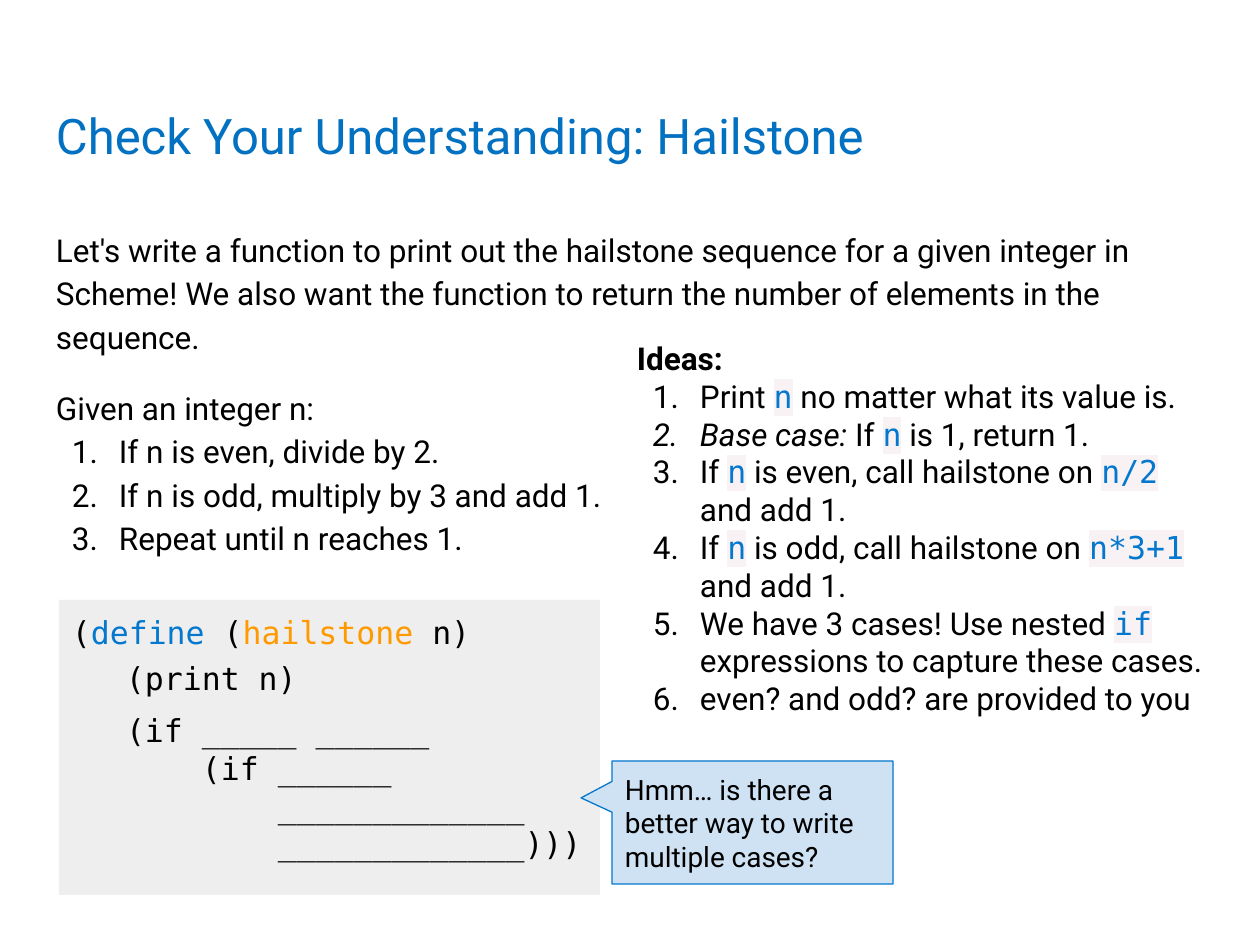
from pptx import Presentation
from pptx import util as u
from pptx.dml.color import RGBColor
from pptx.enum import shapes, text
from pptx.oxml.ns import qn
from lxml import etree

EMU_PER_PX = 914400 / 126
SANS, MONO = "Roboto", "DejaVu Sans Mono"
BLACK, BLUE, TITLE_BLUE, ORANGE = "000000", "0378CE", "0371C1", "FF9900"
CODE_GREY, CALLOUT_BLUE, INLINE_PINK = "EEEEEE", "CFE2F3", "F9F2F4"


def px(n):
    return u.Emu(round(n * EMU_PER_PX))


def rgb(hex_string):
    return RGBColor.from_string(hex_string)


def add_xml(parent, tag, **attributes):
    return etree.SubElement(parent, qn(tag), attributes)


def inline(code):
    """A run of highlighted code inside a sentence."""
    return code, dict(font=MONO, color=BLUE, highlight=INLINE_PINK)


class SlideBuilder:
    INSET = 13
    LIST_INDENT, LIST_HANG = 63, 47

    def __init__(self, slide):
        self.slide = slide

    def frame(self, shape, anchor=text.MSO_ANCHOR.TOP):
        frame = shape.text_frame
        frame.word_wrap = True
        frame.vertical_anchor = anchor
        frame.margin_left = frame.margin_right = px(self.INSET)
        frame.margin_top = frame.margin_bottom = px(self.INSET)
        return frame

    def textbox(self, box, anchor=text.MSO_ANCHOR.TOP):
        return self.frame(self.slide.shapes.add_textbox(*map(px, box)), anchor)

    def shape(self, kind, box, fill, line=None, anchor=text.MSO_ANCHOR.TOP):
        shape = self.slide.shapes.add_shape(kind, *map(px, box))
        shape.shadow.inherit = False
        shape.fill.solid()
        shape.fill.fore_color.rgb = rgb(fill)
        if line:
            shape.line.color.rgb = rgb(line)
            shape.line.width = u.Pt(0.75)
        else:
            shape.line.fill.background()
        return shape, self.frame(shape, anchor)

    def paragraph(self, frame, *parts, numbered=False, indent=0, spacing=None,
                  before=0, **style):
        """Fill the empty first paragraph or add one; a part is a string or (string, style)."""
        first = frame.paragraphs[0]
        paragraph = frame.add_paragraph() if first.runs else first
        paragraph.alignment = text.PP_ALIGN.LEFT
        paragraph.space_before = u.Pt(before)
        if spacing:
            paragraph.line_spacing = spacing
        for part in parts:
            words, own = (part, {}) if isinstance(part, str) else part
            run = paragraph.add_run()
            run.text = words
            self.format(run, **{**style, **own})
        properties = paragraph._p.get_or_add_pPr()
        if numbered:
            indent = self.LIST_INDENT
            properties.set("indent", str(-px(self.LIST_HANG)))
            bullet_color = add_xml(properties, "a:buClr")
            add_xml(bullet_color, "a:srgbClr", val=BLACK)
            add_xml(properties, "a:buFont", typeface=SANS)
            add_xml(properties, "a:buAutoNum", type="arabicPeriod")
        if indent:
            properties.set("marL", str(px(indent)))

    def format(self, run, font=SANS, size=18, color=BLACK, bold=False, italic=False,
               highlight=None):
        run.font.name = font
        run.font.size = u.Pt(size)
        run.font.bold = bold
        run.font.italic = italic
        run.font.color.rgb = rgb(color)
        if highlight:
            mark = etree.Element(qn("a:highlight"))
            add_xml(mark, "a:srgbClr", val=highlight)
            run._r.rPr.find(qn("a:solidFill")).addnext(mark)


def main():
    deck = Presentation()
    deck.slide_width, deck.slide_height = px(1260), px(945)
    build = SlideBuilder(deck.slides.add_slide(deck.slide_layouts[6]))

    title = build.textbox((43, 82, 1174, 105), text.MSO_ANCHOR.MIDDLE)
    build.paragraph(title, "Check Your Understanding: Hailstone", size=28, color=TITLE_BLUE)

    task = build.textbox((43, 212, 1174, 364))
    build.paragraph(task, "Let's write a function to print out the hailstone sequence for a "
                    "given integer in Scheme! We also want the function to return the "
                    "number of elements in the sequence.", spacing=1.15)
    build.paragraph(task, "Given an integer n:", spacing=1.15, before=16)
    for step in ("If n is even, divide by 2.",
                 "If n is odd, multiply by 3 and add 1.",
                 "Repeat until n reaches 1."):
        build.paragraph(task, step, numbered=True, spacing=1.15)

    ideas = build.textbox((624, 326, 593, 373))
    build.paragraph(ideas, "Ideas:", bold=True)
    for idea in (
        ("Print ", inline("n"), " no matter what its value is."),
        (("Base case:", dict(italic=True)), " If ", inline("n"), " is 1, return 1."),
        ("If ", inline("n"), " is even, call hailstone on ", inline("n/2 "), "and add 1."),
        ("If ", inline("n"), " is odd, call hailstone on ", inline("n*3+1"), " and add 1."),
        ("We have 3 cases! Use nested ", inline("if"),
         " expressions to capture these cases."),
        ("even? and odd? are provided to you",),
    ):
        build.paragraph(ideas, *idea, numbered=True)

    _, definition = build.shape(shapes.MSO_SHAPE.RECTANGLE, (59, 600, 541, 295), CODE_GREY)
    build.paragraph(definition, "(", ("define", dict(color=BLUE)), " (",
                    ("hailstone", dict(color=ORANGE)), " n)", font=MONO)

    print_call = build.textbox((113, 646, 199, 60))
    build.paragraph(print_call, "(print n)", font=MONO)

    branches = build.textbox((113, 698, 485, 186))
    code_indent = 76  # four monospaced characters
    for depth, code in ((0, "(if _____ ______"), (1, "(if ______"),
                        (2, "_" * 13), (2, "_" * 13 + ")))")):
        build.paragraph(branches, code, font=MONO, indent=depth * code_indent)

    callout, hint = build.shape(shapes.MSO_SHAPE.ROUNDED_RECTANGULAR_CALLOUT,
                                (612, 761, 281, 123), CALLOUT_BLUE, BLUE,
                                text.MSO_ANCHOR.MIDDLE)
    for i, value in enumerate((-0.61, -0.2, 0)):
        callout.adjustments[i] = value
    build.paragraph(hint, "Hmm… is there a better way to write multiple cases?", size=16)

    deck.save("out.pptx")


if __name__ == "__main__":
    main()
